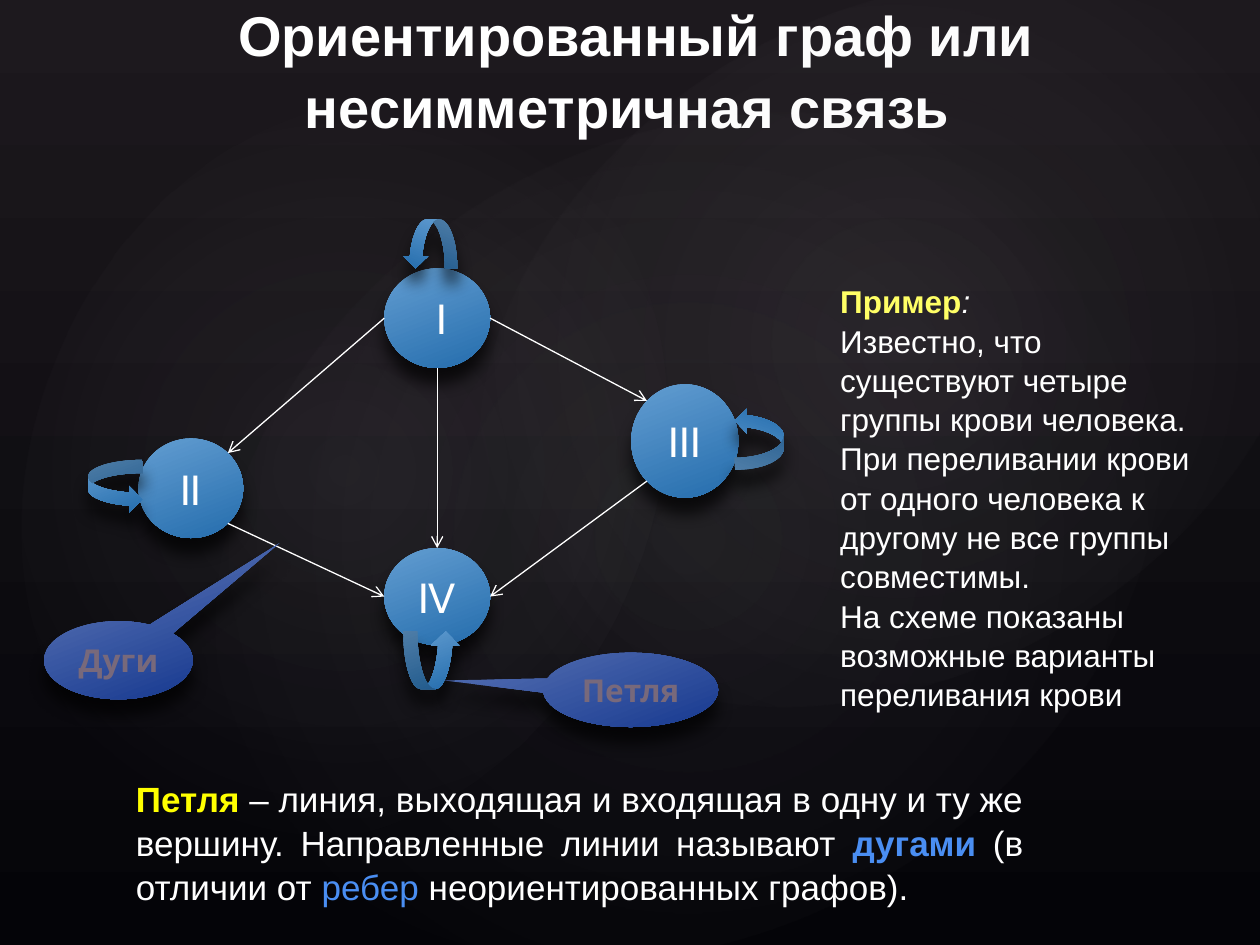
from math import sqrt

from lxml import etree
from pptx import Presentation
from pptx.dml.color import RGBColor
from pptx.enum.shapes import MSO_CONNECTOR, MSO_SHAPE as SHAPE
from pptx.enum.text import MSO_ANCHOR, PP_ALIGN as ALIGN
from pptx.oxml import parse_xml
from pptx.oxml.ns import nsdecls, qn
from pptx.util import Inches, Pt

WHITE = RGBColor(0xFF, 0xFF, 0xFF)
PALE_YELLOW = RGBColor(0xFF, 0xFF, 0x66)
YELLOW = RGBColor(0xFF, 0xFF, 0x00)
LINK_BLUE = RGBColor(0x4A, 0x8E, 0xF2)
CALLOUT_TEXT = RGBColor(0x78, 0x69, 0x7B)
NODE_FILL = RGBColor(0x62, 0x9D, 0xD1), RGBColor(0x25, 0x6D, 0xAD)
CALLOUT_FILL = RGBColor(0x4A, 0x66, 0xAC), RGBColor(0x18, 0x3A, 0x90)
BACKDROP = RGBColor(0x1D, 0x19, 0x1E), RGBColor(0x04, 0x04, 0x08)
GLOW = RGBColor(0xC4, 0xBC, 0xC6)

# Runs: text, size, colour, bold, italic
TITLE = [[(" ", 36, WHITE, True, False),
          ("Ориентированный граф или несимметричная связь", 32, WHITE, True, False)]]
EXAMPLE = [
    [("Пример", 18, PALE_YELLOW, True, False), (":", 18, WHITE, False, True)],
    [("Известно, что существуют четыре группы крови человека. При переливании крови "
      "от одного человека к другому не все группы совместимы.", 18, WHITE, False, False)],
    [("На схеме показаны возможные варианты переливания крови", 18, WHITE, False, False)],
]
DEFINITION = [[
    ("Петля ", 20, YELLOW, True, False),
    ("– линия, выходящая и входящая в одну и ту же вершину. Направленные линии называют ",
     20, WHITE, False, False),
    ("дугами", 20, LINK_BLUE, True, False),
    (" (в отличии от ", 20, WHITE, False, False),
    ("ребер", 20, LINK_BLUE, False, False),
    (" неориентированных графов). ", 20, WHITE, False, False),
]]

GLOWS = [  # bounds, rotation, opacity in percent
    ((1.5, 1.14, 7.92, 6.24), 328.7, 7),
    ((-0.3, 1.28, 6.06, 4.9), 294.3, 8),
    ((3.58, 0.13, 7.09, 5.2), 328.7, 8),
]
NODES = {
    " I": (3.05, 2.13, 0.84, 0.79),
    "II": (1.1, 3.48, 0.83, 0.79),
    "IV": (3.05, 4.35, 0.84, 0.77),
    "III": (5.01, 3.05, 0.85, 0.9),
}
LOOPS = [  # preset, bounds, flip attribute
    (SHAPE.CURVED_UP_ARROW, (3.2, 5.01, 0.45, 0.46), None),
    (SHAPE.CURVED_DOWN_ARROW, (3.2, 1.74, 0.43, 0.39), "flipH"),
    (SHAPE.CURVED_RIGHT_ARROW, (0.7, 3.65, 0.43, 0.42), None),
    (SHAPE.CURVED_LEFT_ARROW, (5.83, 3.24, 0.39, 0.49), "flipV"),
]
DIAGONAL = sqrt(0.5)
ARCS = [  # node and direction from its centre, at the start and at the end
    (" I", (1, 0), "III", (-DIAGONAL, -DIAGONAL)),
    (" I", (-1, 0), "II", (DIAGONAL, -DIAGONAL)),
    ("II", (DIAGONAL, DIAGONAL), "IV", (-1, 0)),
    ("III", (-DIAGONAL, DIAGONAL), "IV", (1, 0)),
    (" I", (0, 1), "IV", (0, -1)),
]
CALLOUTS = [
    ("Дуги", (0.35, 4.93, 1.18, 0.62), (1.083, -1.499)),
    ("Петля", (4.31, 5.18, 1.39, 0.59), (-1.065, -0.126)),
]


def inches(values):
    return [Inches(value) for value in values]


def set_gradient(fill, colours, clockwise_angle):
    fill.gradient()
    fill.gradient_angle = 360 - clockwise_angle
    for stop, colour in zip(fill.gradient_stops, colours):
        stop.color.rgb = colour


def add_runs(para, runs, font_name):
    for text, size, colour, bold, italic in runs:
        span = para.add_run()
        span.text = text
        font = span.font
        font.name, font.size = font_name, Pt(size)
        font.bold, font.italic = bold, italic
        font.color.rgb = colour


def write(frame, paragraphs, align, spacing):
    frame.word_wrap = True
    for index, runs in enumerate(paragraphs):
        para = frame.add_paragraph() if index else frame.paragraphs[0]
        para.alignment, para.line_spacing = align, spacing
        add_runs(para, runs, "Arial")


def add_glow(shapes, bounds, rotation, opacity):
    """Add an ellipse that fades from its centre to nothing."""
    glow = shapes.add_shape(SHAPE.OVAL, *inches(bounds))
    glow.rotation = rotation
    glow.shadow.inherit = False
    glow.line.fill.background()
    stops = "".join(
        f'<a:gs pos="{position}"><a:srgbClr val="{GLOW}">'
        f'<a:alpha val="{alpha}"/></a:srgbClr></a:gs>'
        for position, alpha in ((0, opacity * 1000), (58000, 0), (100000, 0)))
    gradient = parse_xml(
        f'<a:gradFill {nsdecls("a")}><a:gsLst>{stops}</a:gsLst><a:path path="circle">'
        '<a:fillToRect l="50000" t="50000" r="50000" b="50000"/></a:path></a:gradFill>')
    glow.element.spPr.find(qn("a:prstGeom")).addnext(gradient)


def add_raised(shapes, preset, bounds, colours):
    """Add a gradient shape with a soft shadow below it."""
    shape = shapes.add_shape(preset, *inches(bounds))
    set_gradient(shape.fill, colours, 69)
    shape.line.fill.background()
    shape.shadow.inherit = False
    shape.element.spPr.find(qn("a:effectLst")).append(parse_xml(
        f'<a:outerShdw {nsdecls("a")} blurRad="{Pt(9)}" dist="{Pt(9)}" dir="5400000" '
        'rotWithShape="0"><a:srgbClr val="000000"><a:alpha val="70000"/></a:srgbClr>'
        '</a:outerShdw>'))
    return shape


def label(shape, text, size, colour, bold):
    frame = shape.text_frame
    frame.word_wrap = False
    frame.vertical_anchor = MSO_ANCHOR.MIDDLE
    para = frame.paragraphs[0]
    para.alignment = ALIGN.CENTER
    add_runs(para, [(text, size, colour, bold, False)], "Cabin")


def rim_point(node, direction):
    left, top, width, height = NODES[node]
    return (left + width / 2 * (1 + direction[0]), top + height / 2 * (1 + direction[1]))


def add_arc(shapes, start, end):
    arc = shapes.add_connector(MSO_CONNECTOR.STRAIGHT, *inches(start + end))
    arc.line.color.rgb = WHITE
    arc.line.width = Pt(0.75)
    etree.SubElement(arc.line._get_or_add_ln(), qn("a:tailEnd"), type="arrow")
    etree.SubElement(arc.element.spPr, qn("a:effectLst"))


def main():
    deck = Presentation()
    deck.slide_width, deck.slide_height = Inches(10), Inches(7.5)
    page = deck.slides.add_slide(deck.slide_layouts[5])
    shapes = page.shapes
    set_gradient(page.background.fill, BACKDROP, 90)
    for glow in GLOWS:
        add_glow(shapes, *glow)

    title = shapes.title
    title.left, title.top, title.width, title.height = inches((1.06, 0.13, 7.84, 1.03))
    title.text_frame.vertical_anchor = MSO_ANCHOR.BOTTOM
    write(title.text_frame, TITLE, ALIGN.CENTER, 1.05)

    for name, bounds in NODES.items():
        label(add_raised(shapes, SHAPE.OVAL, bounds, NODE_FILL), name, 24, WHITE, False)
    for preset, bounds, flip in LOOPS:
        loop = add_raised(shapes, preset, bounds, NODE_FILL)
        if flip:
            loop.element.spPr.find(qn("a:xfrm")).set(flip, "1")
    for source, leaving, target, entering in ARCS:
        add_arc(shapes, rim_point(source, leaving), rim_point(target, entering))

    example = shapes.add_textbox(*inches((6.57, 2.18, 3.15, 3.43)))
    write(example.text_frame, EXAMPLE, ALIGN.LEFT, 1.04)
    for text, bounds, tip in CALLOUTS:
        callout = add_raised(shapes, SHAPE.OVAL_CALLOUT, bounds, CALLOUT_FILL)
        callout.adjustments[0], callout.adjustments[1] = tip
        label(callout, text, 18, CALLOUT_TEXT, True)
    definition = shapes.add_textbox(*inches((0.98, 6.11, 7.24, 1.11)))
    write(definition.text_frame, DEFINITION, ALIGN.JUSTIFY, 1.04)

    deck.save("out.pptx")


if __name__ == "__main__":
    main()
